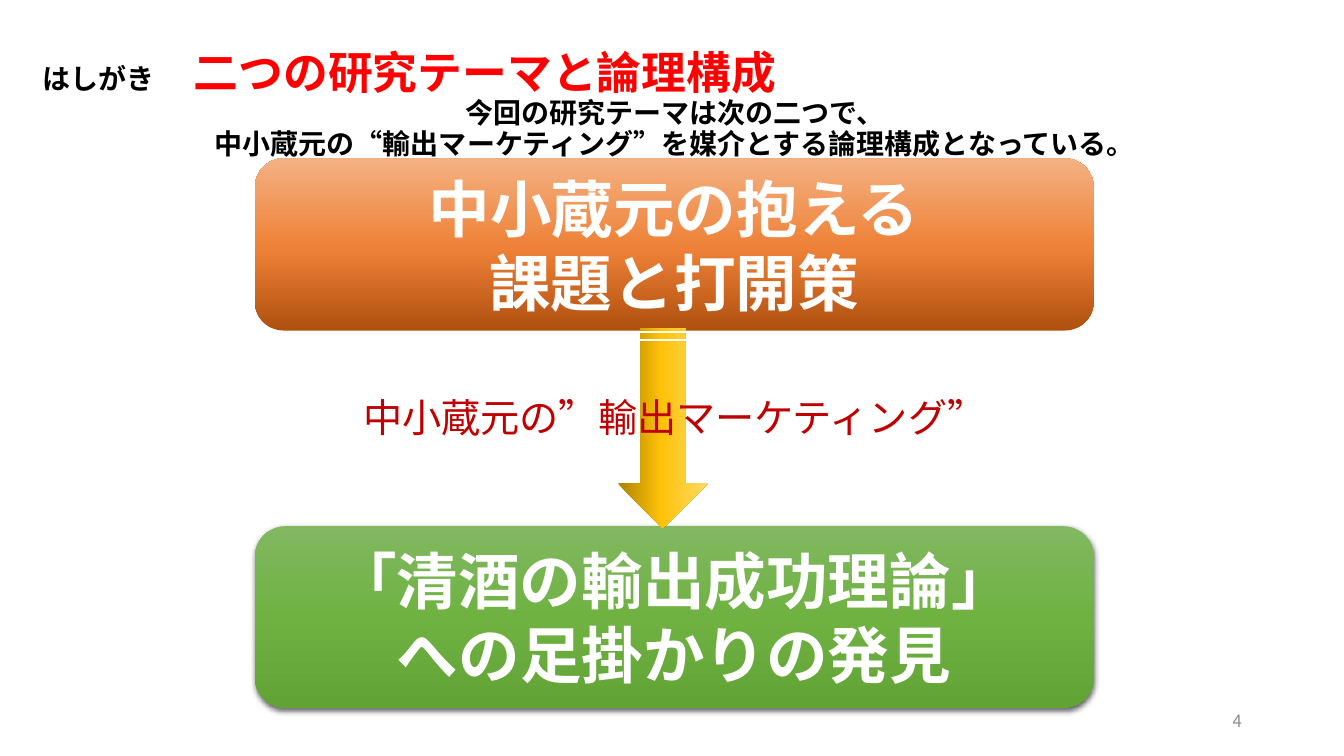
from copy import deepcopy
from dataclasses import dataclass

from lxml import etree
from pptx import Presentation
from pptx.dml.color import RGBColor
from pptx.enum.shapes import MSO_SHAPE
from pptx.enum.text import MSO_ANCHOR, MSO_AUTO_SIZE, PP_ALIGN
from pptx.oxml.ns import qn
from pptx.util import Emu, Inches, Pt

ROUNDED = MSO_SHAPE.ROUNDED_RECTANGLE
STRIPED_ARROW = MSO_SHAPE.STRIPED_RIGHT_ARROW
CENTER, RIGHT = PP_ALIGN.CENTER, PP_ALIGN.RIGHT
MIDDLE, TOP = MSO_ANCHOR.MIDDLE, MSO_ANCHOR.TOP
FIXED, GROW = MSO_AUTO_SIZE.NONE, MSO_AUTO_SIZE.SHAPE_TO_FIT_TEXT

FONT = "Noto Sans CJK JP"
COLORS = {"black": "000000", "red": "FF0000", "crimson": "C00000",
          "white": "FFFFFF", "gray": "8C8C8C"}
GRADIENTS = {
    "orange": ((0, "B0500F"), (0.48, "EE8137"), (1, "F4B183")),
    "green": ((0, "81B861"), (0.5, "6FB242"), (1, "62A336")),
    "gold": ((0, "AB8100"), (0.48, "FFC208"), (1, "FFD966")),
}
SLIDE_HEIGHT = Inches(7.5)
SLIDE_WIDTH = SLIDE_HEIGHT * 16 // 9
ROWS = 18
CELL = SLIDE_HEIGHT / ROWS
TITLE_COLUMN = 8.04


@dataclass(frozen=True)
class Area:
    column: float
    row: float
    columns: float
    rows: float

    def lengths(self) -> list[Emu]:
        return [Emu(round(cells * CELL))
                for cells in (self.column, self.row, self.columns, self.rows)]


@dataclass(frozen=True)
class Block:
    area: Area
    preset: int
    gradient: str
    angle: int
    text: str = ""
    rotation: int = 0
    shadow: bool = False


@dataclass(frozen=True)
class Label:
    area: Area
    text: str
    size: int
    color: str
    align: int
    anchor: int
    sizing: int


BLOCKS = (
    Block(Area(6.07, 3.77, 19.97, 4.1), ROUNDED, "orange", 90,
          "中小蔵元の抱える\n課題と打開策"),
    Block(Area(6.07, 12.53, 19.97, 4.32), ROUNDED, "green", 270,
          "「清酒の輸出成功理論」\nへの足掛かりの発見", shadow=True),
    Block(Area(13.39, 9.12, 4.78, 2.14), STRIPED_ARROW, "gold", 90, rotation=90),
)
PAGE_NUMBER = Label(Area(22.61, 16.68, 7.2, 0.96), "4", 12, "gray", RIGHT, MIDDLE, FIXED)
MEDIUM = Label(Area(8, 9.24, 16.13, 1.37), "中小蔵元の”輸出マーケティング”",
               28, "crimson", CENTER, TOP, GROW)


def style_span(span, size: int, color: str, bold: bool = False) -> None:
    span.font.size = Pt(size)
    span.font.bold = bold
    span.font.color.rgb = RGBColor.from_string(COLORS[color])
    span.font.name = FONT
    etree.SubElement(span.font._element, qn("a:ea"), typeface=FONT)


def fill_text(frame, text: str, size: int, color: str, align: int, bold: bool = False) -> None:
    frame.word_wrap = True
    frame.text = text
    for para in frame.paragraphs:
        para.alignment = align
        for span in para.runs:
            style_span(span, size, color, bold)


def add_heading(page) -> None:
    body = page.placeholders[1]
    body.left, body.top, body.width, body.height = Area(0.77, 1.1, 30.6, 15.58).lengths()
    frame = body.text_frame
    frame.auto_size = FIXED
    fill_text(frame, "はしがき\t\n今回の研究テーマは次の二つで、\n"
              "中小蔵元の“輸出マーケティング”を媒介とする論理構成となっている。",
              20, "black", CENTER, bold=True)
    for para in frame.paragraphs:
        para.line_spacing = 0.9
        para.space_before = Pt(0)
        properties = para._p.get_or_add_pPr()
        properties.set("marL", "0")
        properties.set("indent", "0")
        etree.SubElement(properties, qn("a:buNone"))
    first = frame.paragraphs[0]
    first.alignment = PP_ALIGN.LEFT
    first.space_before = Pt(10)
    tabs = etree.SubElement(first._p.pPr, qn("a:tabLst"))
    etree.SubElement(tabs, qn("a:tab"), pos=str(round(TITLE_COLUMN * CELL)), algn="l")
    title = first.add_run()
    title.text = "二つの研究テーマと論理構成"
    style_span(title, 32, "red", bold=True)


def add_label(page, label: Label) -> None:
    box = page.shapes.add_textbox(*label.area.lengths())
    frame = box.text_frame
    fill_text(frame, label.text, label.size, label.color, label.align)
    frame.vertical_anchor = label.anchor
    frame.auto_size = label.sizing


def apply_gradient(shape, name: str, angle: int) -> None:
    fill = shape.fill
    fill.gradient()
    fill.gradient_angle = angle
    stop_list = shape._element.spPr.find(".//" + qn("a:gsLst"))
    stop_list.append(deepcopy(stop_list[-1]))
    for stop, (position, color) in zip(fill.gradient_stops, GRADIENTS[name]):
        stop.position = position
        stop.color.rgb = RGBColor.from_string(color)


def add_shadow(shape) -> None:
    effects = shape._element.spPr.find(qn("a:effectLst"))
    shadow = etree.SubElement(effects, qn("a:outerShdw"), blurRad=str(Pt(4.5)),
                              dist=str(Pt(1.5)), dir="5400000", rotWithShape="0")
    color = etree.SubElement(shadow, qn("a:srgbClr"), val=COLORS["black"])
    etree.SubElement(color, qn("a:alpha"), val="63000")


def add_block(page, block: Block) -> None:
    shape = page.shapes.add_shape(block.preset, *block.area.lengths())
    shape.rotation = block.rotation
    shape.line.fill.background()
    shape.shadow.inherit = False
    apply_gradient(shape, block.gradient, block.angle)
    if block.shadow:
        add_shadow(shape)
    if block.text:
        fill_text(shape.text_frame, block.text, 44, "white", CENTER, bold=True)
        shape.text_frame.vertical_anchor = MIDDLE


def main() -> None:
    deck = Presentation()
    deck.slide_width, deck.slide_height = SLIDE_WIDTH, SLIDE_HEIGHT
    page = deck.slides.add_slide(deck.slide_layouts[1])
    empty_title = page.shapes.title._element
    empty_title.getparent().remove(empty_title)
    add_heading(page)
    add_label(page, PAGE_NUMBER)
    for block in BLOCKS:
        add_block(page, block)
    add_label(page, MEDIUM)
    deck.save("out.pptx")


if __name__ == "__main__":
    main()
